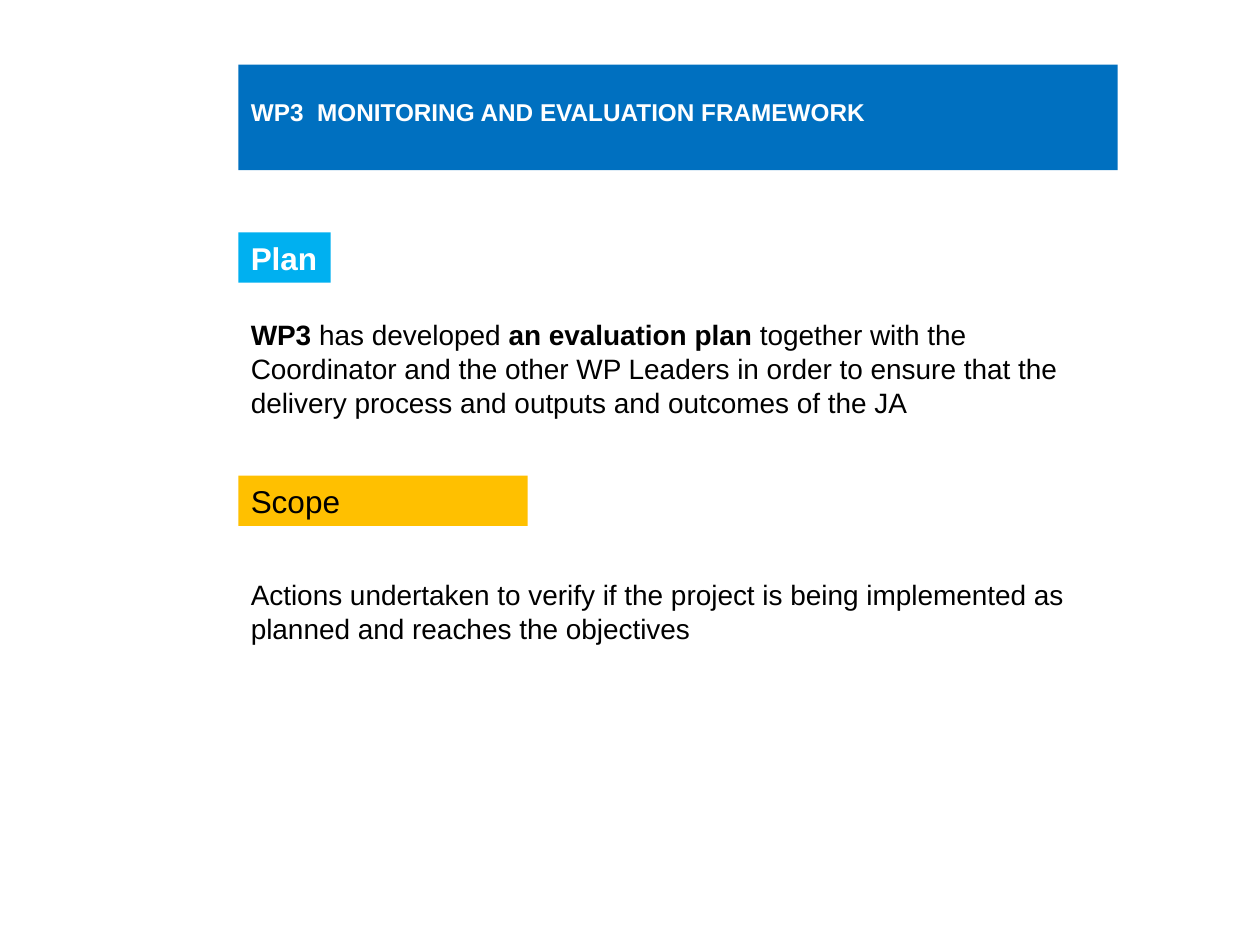
from pptx import Presentation
from pptx.dml.color import RGBColor
from pptx.enum.shapes import MSO_SHAPE
from pptx.enum.text import MSO_ANCHOR, PP_ALIGN
from pptx.util import Pt

RECTANGLE = MSO_SHAPE.RECTANGLE
TOP, MIDDLE = MSO_ANCHOR.TOP, MSO_ANCHOR.MIDDLE
LEFT = PP_ALIGN.LEFT

THEME = {
    "font": "Arial",
    "title_size": 24,
    "label_size": 18,
    "body_size": 16,
    "banner": RGBColor(0x00, 0x70, 0xC0),
    "plan": RGBColor(0x00, 0xB0, 0xF0),
    "scope": RGBColor(0xFF, 0xC0, 0x00),
    "light": RGBColor(0xFF, 0xFF, 0xFF),
    "dark": RGBColor(0x00, 0x00, 0x00),
}
LEFT_EDGE = 136.2
CONTENT_WIDTH = 502.5
LABEL_HEIGHT = 28.8
LINE_FACTOR = 1.21


def write_text(shape, paragraphs, size, color, anchor=TOP, wrap=True, baseline=None):
    """Fill a shape with paragraphs, each a list of (text, bold) runs."""
    frame = shape.text_frame
    frame.word_wrap = wrap
    frame.vertical_anchor = anchor
    frame.margin_left = frame.margin_right = Pt(7.2)
    frame.margin_top = frame.margin_bottom = Pt(3.6)
    for index, runs in enumerate(paragraphs):
        paragraph = frame.add_paragraph() if index else frame.paragraphs[0]
        paragraph.alignment = LEFT
        paragraph.space_before = Pt(0)
        if baseline is None:
            paragraph.line_spacing = Pt(round(size * LINE_FACTOR, 1))
        for text, bold in runs:
            run = paragraph.add_run()
            run.text = text
            run.font.name = THEME["font"]
            run.font.size = Pt(size)
            run.font.bold = bold
            run.font.color.rgb = color
            if baseline is not None:
                run.font._element.set("baseline", str(baseline * 1000))


presentation = Presentation()
presentation.slide_width = Pt(720)
presentation.slide_height = Pt(540)
slide = presentation.slides.add_slide(presentation.slide_layouts[5])

# Title banner
title = slide.shapes.title
title.left, title.top = Pt(LEFT_EDGE), Pt(37)
title.width, title.height = Pt(CONTENT_WIDTH), Pt(60.2)
title.fill.solid()
title.fill.fore_color.rgb = THEME["banner"]
write_text(title, [[("WP3  MONITORING AND EVALUATION FRAMEWORK", True)]],
           size=THEME["title_size"], color=THEME["light"], anchor=MIDDLE, baseline=30)

# Section labels: text, top, width, fill, text color, bold, wrap
labels = [
    ("Plan", 132.8, 52.8, THEME["plan"], THEME["light"], True, False),
    ("Scope", 271.8, 165.3, THEME["scope"], THEME["dark"], False, True),
]
for text, top, width, fill, color, bold, wrap in labels:
    label = slide.shapes.add_shape(
        RECTANGLE, Pt(LEFT_EDGE), Pt(top), Pt(width), Pt(LABEL_HEIGHT))
    label.shadow.inherit = False
    label.fill.solid()
    label.fill.fore_color.rgb = fill
    label.line.fill.background()
    write_text(label, [[(text, bold)]], size=THEME["label_size"], color=color, wrap=wrap)

# Section texts: top, width, height, paragraphs
bodies = [
    (177.8, CONTENT_WIDTH, 65.5, [[
        ("WP3", True),
        (" has developed ", False),
        ("an evaluation plan ", True),
        ("together with the Coordinator and the other WP Leaders in order to ensure "
         "that the delivery process and outputs and outcomes of the JA", False),
    ]]),
    (326.2, 534.2, 159.1, [
        [("Actions undertaken to verify if the project is being implemented as", False)],
        [("planned and reaches the objectives", False)],
    ]),
]
for top, width, height, paragraphs in bodies:
    body = slide.shapes.add_textbox(Pt(LEFT_EDGE), Pt(top), Pt(width), Pt(height))
    write_text(body, paragraphs, size=THEME["body_size"], color=THEME["dark"])

presentation.save("out.pptx")
